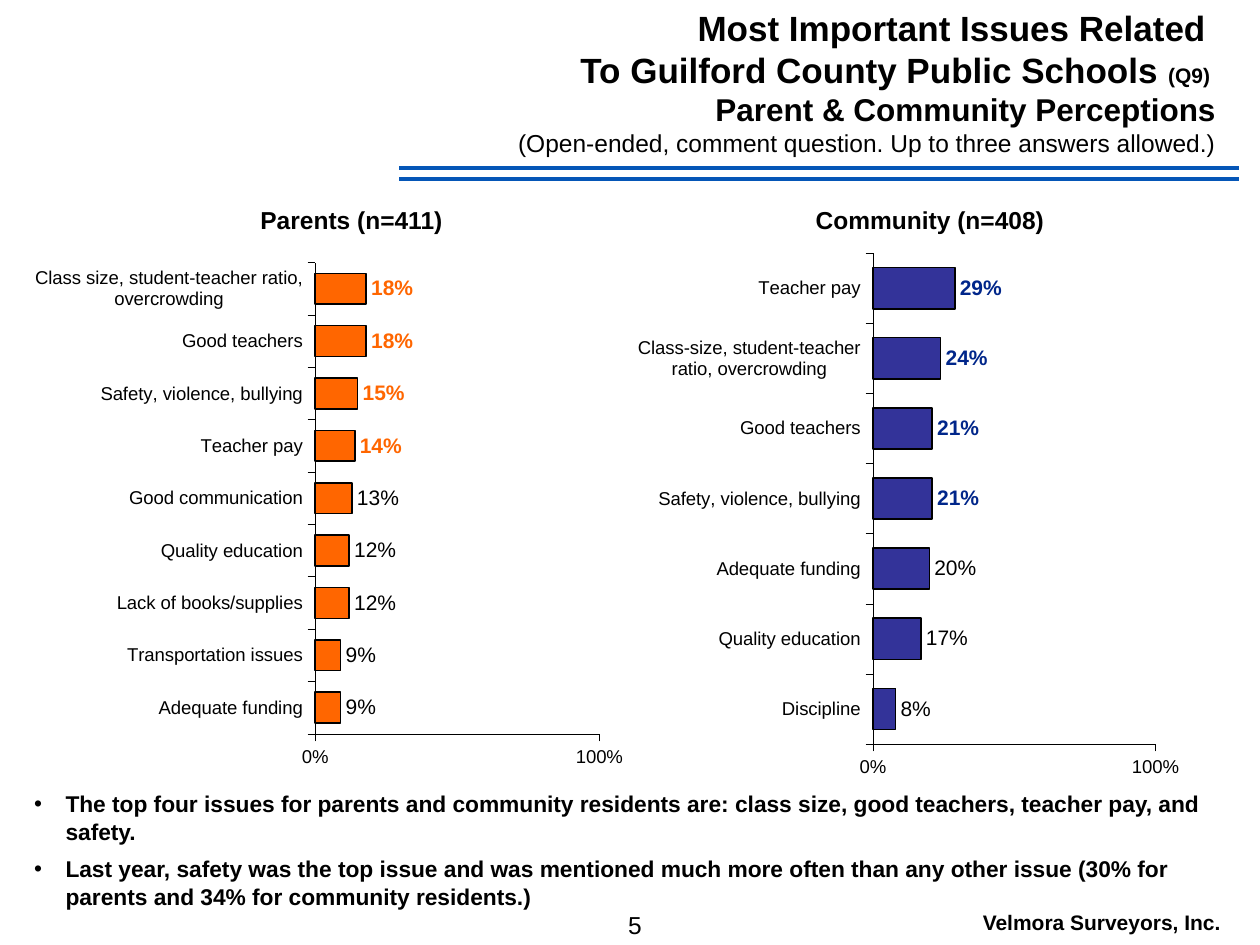
from pptx import Presentation
from pptx.chart.data import CategoryChartData
from pptx.dml.color import RGBColor
from pptx.enum.chart import XL_CHART_TYPE as Kind, XL_LABEL_POSITION as Spot, XL_TICK_MARK as Tick
from pptx.enum.shapes import MSO_CONNECTOR as Conn
from pptx.enum.text import MSO_ANCHOR as Anchor, MSO_AUTO_SIZE as Fit, PP_ALIGN as Align
from pptx.oxml import parse_xml
from pptx.oxml.ns import nsdecls
from pptx.util import Inches, Pt

HUES = {"ink": "000000", "rule": "0556B7", "orange": "FF6600",
        "indigo": "333399", "navy": "00268A"}

PARENTS = [("Adequate funding", .09), ("Transportation issues", .09),
           ("Lack of books/supplies", .12), ("Quality education", .12),
           ("Good communication", .13), ("Teacher pay", .14),
           ("Safety, violence, bullying", .15), ("Good teachers", .18),
           ("Class size, student-teacher ratio, overcrowding", .18)]
PUBLIC = [("Discipline", .08), ("Quality education", .17),
          ("Adequate funding", .2), ("Safety, violence, bullying", .21),
          ("Good teachers", .21),
          ("Class-size, student-teacher ratio, overcrowding", .24),
          ("Teacher pay", .29)]
TITLE = [[("Most Important Issues Related ", 20, True)],
         [("To Guilford County Public Schools ", 20, True), ("(Q9) ", 12, True)],
         [("Parent & Community Perceptions", 18, True)],
         [("(Open-ended, comment question. Up to three answers allowed.)", 14, False)]]
NOTES = ["The top four issues for parents and community residents are: "
         "class size, good teachers, teacher pay, and safety.",
         "Last year, safety was the top issue and was mentioned much more often "
         "than any other issue (30% for parents and 34% for community residents.)"]


def tint(hue):
    return RGBColor.from_string(HUES[hue])


def style(font, size, bold=False, hue="ink"):
    for name, value in {"name": "Arial", "size": Pt(size), "bold": bold}.items():
        setattr(font, name, value)
    font.color.rgb = tint(hue)


def place(shape, box):
    for name, value in zip(("left", "top", "width", "height"), box):
        setattr(shape, name, Inches(value))


def fill_text(frame, rows, align):
    """Write rows of (text, size, bold) runs, one paragraph per row."""
    for name, value in {"word_wrap": True, "auto_size": Fit.NONE,
                        "vertical_anchor": Anchor.TOP}.items():
        setattr(frame, name, value)
    for i, row in enumerate(rows):
        para = frame.add_paragraph() if i else frame.paragraphs[0]
        para.alignment = align
        para.space_before = Pt(0)
        for text, size, bold in row:
            run = para.add_run()
            run.text = text
            style(run.font, size, bold)


def add_label(slide, box, text, size, bold=True):
    shape = slide.shapes.add_textbox(*map(Inches, box))
    fill_text(shape.text_frame, [[(text, size, bold)]], Align.CENTER)


def add_rule(slide, y):
    line = slide.shapes.add_connector(
        Conn.STRAIGHT, Inches(3.17), Inches(y), Inches(9.83), Inches(y))
    line.line.color.rgb = tint("rule")
    line.line.width = Pt(2.25)
    line._element.spPr.append(parse_xml(f"<a:effectLst {nsdecls('a')}/>"))


def set_plot(chart, spot):
    """Fix the inner plot area as x, y, width, height fractions."""
    area = chart._chartSpace.chart.plotArea
    for old in area.findall("{*}layout"):
        area.remove(old)
    sizes = "".join(f'<c:{tag} val="{value}"/>' for tag, value in zip("xywh", spot))
    area.insert(0, parse_xml(
        f'<c:layout {nsdecls("c")}><c:manualLayout><c:layoutTarget val="inner"/>'
        f'<c:xMode val="edge"/><c:yMode val="edge"/>{sizes}'
        '</c:manualLayout></c:layout>'))


def set_axis(axis):
    axis.has_major_gridlines = False
    axis.major_tick_mark = Tick.OUTSIDE
    axis.minor_tick_mark = Tick.NONE
    axis.format.line.color.rgb = tint("ink")
    axis.format.line.width = Pt(.22)
    style(axis.tick_labels.font, 10.6)


def add_bars(slide, box, spot, rows, hue, accent):
    """Add a bar chart whose top four values are picked out in the accent."""
    data = CategoryChartData(number_format="0%")
    data.categories = [name for name, _ in rows]
    data.add_series("Series 1", [value for _, value in rows])
    chart = slide.shapes.add_chart(Kind.BAR_CLUSTERED, *map(Inches, box), data).chart
    chart.has_title = chart.has_legend = False
    style(chart.font, 13.2, True)
    set_plot(chart, spot)
    for axis in (chart.category_axis, chart.value_axis):
        set_axis(axis)
    scale = chart.value_axis
    scale.minimum_scale, scale.maximum_scale, scale.major_unit = 0, 1, 1
    scale.tick_labels.number_format = "0%"
    scale.tick_labels.number_format_is_linked = False

    plot = chart.plots[0]
    plot.gap_width = 70
    plot.vary_by_categories = False
    bars = plot.series[0]
    bars.format.fill.solid()
    bars.format.fill.fore_color.rgb = tint(hue)
    bars.format.line.color.rgb = tint("ink")
    bars.format.line.width = Pt(.88)
    tags = bars.data_labels
    for name, value in {"show_value": True, "number_format": "0%",
                        "number_format_is_linked": False,
                        "position": Spot.OUTSIDE_END}.items():
        setattr(tags, name, value)
    style(tags.font, 12)
    for i in range(len(rows) - 4, len(rows)):
        tag = bars.points[i].data_label
        style(tag.font, 12, True, accent)
        tag.position = Spot.OUTSIDE_END


def add_notes(body):
    place(body, (.17, 6.22, 9.83, 1.28))
    fill_text(body.text_frame, [[(note, 13, True)] for note in NOTES], Align.LEFT)
    for para in body.text_frame.paragraphs:
        props = para._p.get_or_add_pPr()
        props.set("marL", str(Inches(.25)))
        props.set("indent", str(-Inches(.25)))
    body.text_frame.paragraphs[0].space_after = Pt(6)


def main():
    deck = Presentation()
    deck.slide_width, deck.slide_height = Inches(10), Inches(7.5)
    slide = deck.slides.add_slide(deck.slide_layouts[1])
    for y in (1.33, 1.42):
        add_rule(slide, y)
    add_label(slide, (4.75, 7.17, .58, .33), "5", 14, False)
    add_label(slide, (7.58, 7.17, 2.33, .3), "Velmora Surveyors, Inc.", 12)
    add_bars(slide, (.25, 2.08, 4.78, 4.08), (.471, .001, .472, .917),
             PARENTS, "orange", "orange")
    add_label(slide, (1.08, 1.58, 3.42, .33), "Parents (n=411)", 14)
    add_bars(slide, (5, 1.92, 4.75, 4.25), (.406, .021, .472, .917),
             PUBLIC, "indigo", "navy")
    add_label(slide, (5.67, 1.58, 3.42, .33), "Community (n=408)", 14)
    title, body = slide.placeholders
    place(title, (2.42, 0, 7.33, 1.35))
    fill_text(title.text_frame, TITLE, Align.RIGHT)
    add_notes(body)
    deck.save("out.pptx")


if __name__ == "__main__":
    main()
